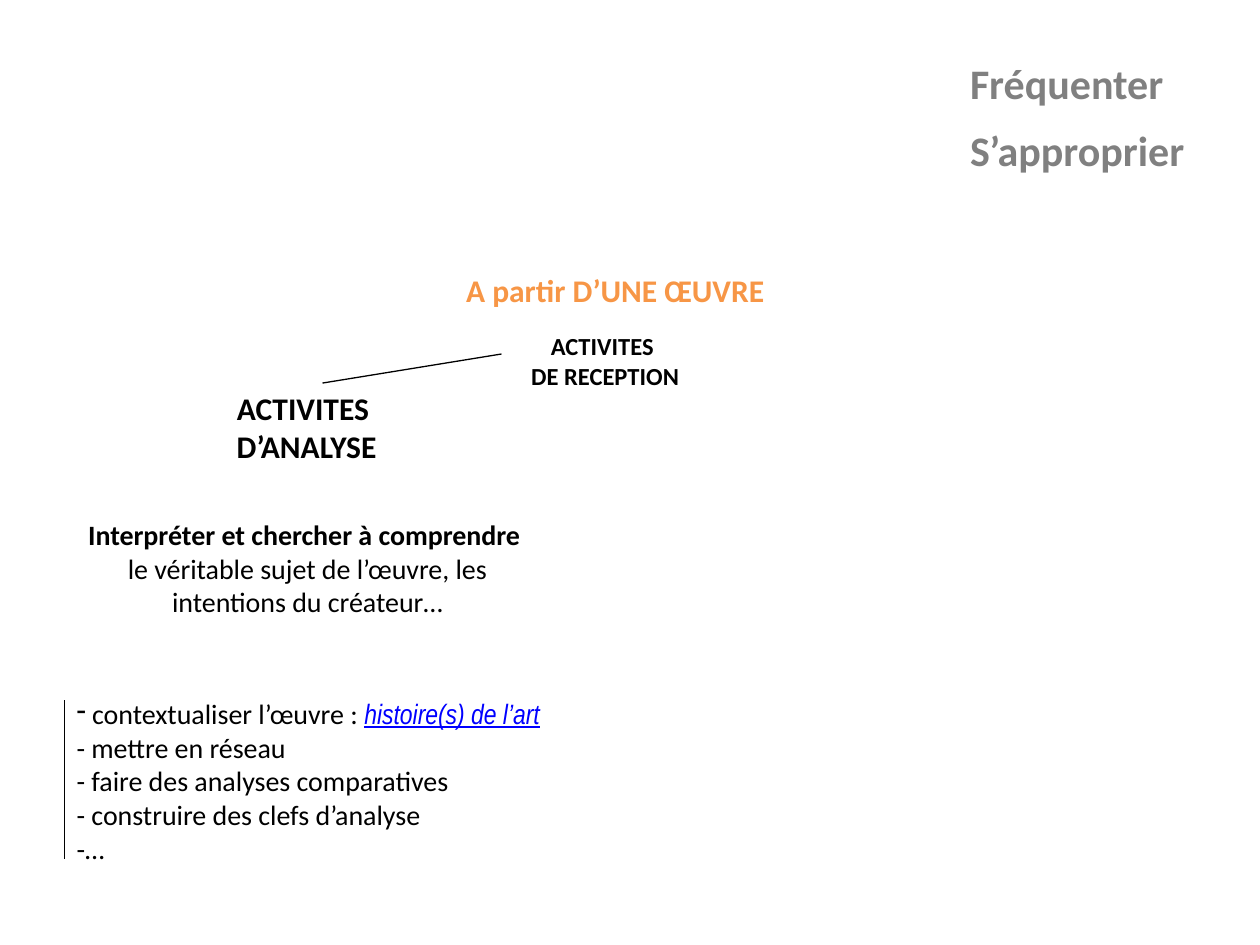
import pptx
import pptx.dml.color
import pptx.enum.shapes
import pptx.enum.text
import pptx.oxml
import pptx.oxml.ns
import pptx.util

Pt = pptx.util.Pt
ALIGN = pptx.enum.text.PP_ALIGN
BLACK, ORANGE, GREY, BLUE = "000000", "F79646", "808080", "0000FF"


def rgb(value):
    return pptx.dml.color.RGBColor.from_string(value)


def add_run(p, text, size=16, color=BLACK, font="Calibri", bold=False,
            italic=False, underline=False):
    """Add text to a paragraph; each newline becomes a line break."""
    for i, line in enumerate(text.split("\n")):
        if i:
            p.add_line_break()
        if not line:
            continue
        r = p.add_run()
        r.text = line
        r.font.name, r.font.size = font, Pt(size)
        r.font.bold, r.font.italic, r.font.underline = bold, italic, underline
        r.font.color.rgb = rgb(color)


def prepare(sp, box, align):
    """Place a text shape and return its first paragraph."""
    sp.left, sp.top, sp.width, sp.height = map(Pt, box)
    tf = sp.text_frame
    tf.word_wrap = True
    tf.auto_size = pptx.enum.text.MSO_AUTO_SIZE.SHAPE_TO_FIT_TEXT
    tf.vertical_anchor = pptx.enum.text.MSO_ANCHOR.TOP
    p = tf.paragraphs[0]
    p.alignment = align
    return p


def add_box(s, box, align=ALIGN.CENTER):
    return prepare(s.shapes.add_textbox(0, 0, 0, 0), box, align)


def add_bullet(p, char):
    pPr = p._p.get_or_add_pPr()
    pPr.set("marL", "0")
    pPr.set("indent", "0")
    bullet = pptx.oxml.parse_xml(
        f'<a:buChar {pptx.oxml.ns.nsdecls("a")} char="{char}"/>')
    pPr.append(bullet)


def add_line(s, x1, y1, x2, y2):
    line = s.shapes.add_connector(
        pptx.enum.shapes.MSO_CONNECTOR.STRAIGHT, Pt(x1), Pt(y1), Pt(x2), Pt(y2))
    line.line.color.rgb = rgb(BLACK)
    line.line.width = Pt(0.75)
    line._element.spPr.append(
        pptx.oxml.parse_xml(f'<a:effectLst {pptx.oxml.ns.nsdecls("a")}/>'))


def main():
    prs = pptx.Presentation()
    prs.slide_width, prs.slide_height = Pt(720), Pt(540)
    s = prs.slides.add_slide(prs.slide_layouts[5])

    # Title
    p = prepare(s.shapes.title, (201.6, 151.2, 300, 29), ALIGN.CENTER)
    add_run(p, "A partir D’UNE ŒUVRE", size=18, color=ORANGE, bold=True)

    # Keywords in the top right corner
    for top, word in ((29.5, "Fréquenter"), (67.7, "S’approprier")):
        p = add_box(s, (547.2, top, 143.3, 36), ALIGN.LEFT)
        add_run(p, word, size=24, color=GREY, bold=True)

    # Two kinds of activity, joined by a line
    p = add_box(s, (195.8, 185.8, 300, 41))
    add_run(p, "ACTIVITES \nDE RECEPTION", size=14, bold=True)
    p = add_box(s, (25.2, 218.9, 300, 51))
    add_run(p, "ACTIVITES \nD’ANALYSE", size=18, bold=True)
    add_line(s, 286.6, 202.3, 184.3, 218.9)

    # Aim of the analysis
    p = add_box(s, (36.7, 292.3, 278, 85))
    add_run(p, "Interpréter et chercher à comprendre \n", bold=True)
    add_run(p, "le véritable sujet de l’œuvre, les intentions du créateur…")

    # List of actions with a rule on its left
    p = add_box(s, (36.7, 394.6, 380, 133), ALIGN.LEFT)
    add_bullet(p, "-")
    add_run(p, " contextualiser l’œuvre : ")
    add_run(p, "histoire(s) de l’art\n", font="Arial Narrow", color=BLUE,
            italic=True, underline=True)
    add_run(p, "- mettre en réseau\n- faire des analyses comparatives\n"
               "- construire des clefs d’analyse\n-…")
    add_line(s, 36.7, 400.3, 36.7, 491)

    prs.save("out.pptx")


if __name__ == "__main__":
    main()
